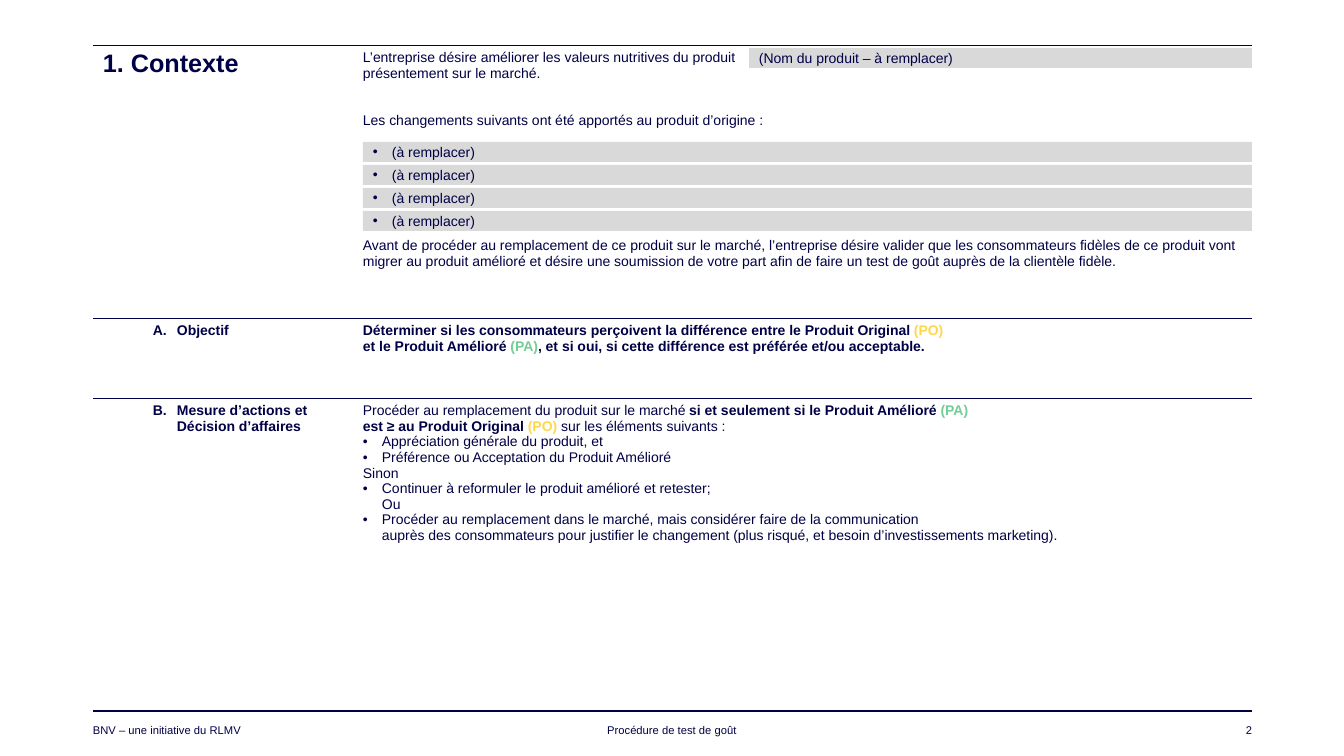
"""Builds the context slide of a taste-test procedure."""
from lxml import etree
from pptx import Presentation
from pptx.dml.color import RGBColor
from pptx.enum.shapes import MSO_CONNECTOR, MSO_SHAPE
from pptx.enum.text import MSO_ANCHOR, PP_ALIGN
from pptx.oxml import parse_xml
from pptx.oxml.ns import nsdecls, qn
from pptx.util import Emu, Pt

NAVY, YELLOW, GREEN, GREY = "000046", "FFD74B", "73CD96", "D9D9D9"
HANG = 19


def px(length):
    """Turn pixels into EMU."""
    return Emu(round(length * 914400 / 100.8))


def write(paragraph, text, size=10, bold=False, color=NAVY, align=PP_ALIGN.LEFT,
          before=0, left=0, hang=0, bullet=False):
    """Append text to a paragraph, with a line break at each newline."""
    paragraph.alignment = align
    paragraph.space_before = Pt(before)
    properties = paragraph._p.get_or_add_pPr()
    properties.set("marL", str(px(left)))
    properties.set("indent", str(-px(hang)))
    if bullet:
        etree.SubElement(properties, qn("a:buFont")).set("typeface", "Arial")
        etree.SubElement(properties, qn("a:buChar")).set("char", "•")
    for index, line in enumerate(text.split("\n")):
        if index:
            paragraph.add_line_break()
        if line:
            run = paragraph.add_run()
            run.text = line
            run.font.name = "Arial"
            run.font.size = Pt(size)
            run.font.bold = bold
            run.font.color.rgb = RGBColor.from_string(color)


deck = Presentation()
deck.slide_width, deck.slide_height = px(1344), px(756)
slide = deck.slides.add_slide(deck.slide_layouts[6])

footer_rule = slide.shapes.add_connector(
    MSO_CONNECTOR.STRAIGHT, px(93), px(711), px(1252), px(711))
footer_rule.line.color.rgb = RGBColor.from_string(NAVY)
footer_rule.line.width = Pt(0.75)
etree.SubElement(footer_rule._element.spPr, qn("a:effectLst"))

row_heights = [273, 80, 213]
sections = slide.shapes.add_table(
    3, 2, px(93), px(45), px(1159), px(sum(row_heights))).table
sections.first_row = sections.horz_banding = False
for column, width in zip(sections.columns, [260, 899]):
    column.width = px(width)
for row, height in zip(sections.rows, row_heights):
    row.height = px(height)

rule_fill = f'<a:solidFill><a:srgbClr val="{NAVY}"/></a:solidFill>'
for row in range(3):
    for column in range(2):
        cell = sections.cell(row, column)
        cell.fill.background()
        cell.margin_left = cell.margin_right = px(10)
        cell.margin_top = cell.margin_bottom = px(5)
        bottom_fill = rule_fill if row < 2 else "<a:noFill/>"
        for edge, fill in [("lnB", bottom_fill), ("lnT", rule_fill),
                           ("lnR", "<a:noFill/>"), ("lnL", "<a:noFill/>")]:
            cell._tc.get_or_add_tcPr().insert(0, parse_xml(
                f'<a:{edge} {nsdecls("a")} w="6350">{fill}</a:{edge}>'))

headings = [
    ("1. Contexte", dict(size=18)),
    ("A.\tObjectif", dict(left=74, hang=24)),
    ("B.\tMesure d’actions et\nDécision d’affaires", dict(left=74, hang=24)),
]
for row, (heading, layout) in enumerate(headings):
    write(sections.cell(row, 0).text_frame.paragraphs[0], heading, bold=True, **layout)

context = sections.cell(0, 1).text_frame
write(context.paragraphs[0],
      "L’entreprise désire améliorer les valeurs nutritives du produit\n"
      "présentement sur le marché.")
write(context.add_paragraph(),
      "Les changements suivants ont été apportés au produit d’origine :", before=22.3)
write(context.add_paragraph(),
      "Avant de procéder au remplacement de ce produit sur le marché, l’entreprise désire "
      "valider que les consommateurs fidèles de ce produit vont migrer au produit amélioré "
      "et désire une soumission de votre part afin de faire un test de goût auprès de la "
      "clientèle fidèle.", before=78.5)

objective = sections.cell(1, 1).text_frame.paragraphs[0]
for text, color in [
    ("Déterminer si les consommateurs perçoivent la différence entre le Produit Original ", NAVY),
    ("(PO)\n", YELLOW),
    ("et le Produit Amélioré ", NAVY),
    ("(PA)", GREEN),
    (", et si oui, si cette différence est préférée et/ou acceptable.", NAVY),
]:
    write(objective, text, bold=True, color=color)

actions = sections.cell(2, 1).text_frame
for text, bold, color in [
    ("Procéder au remplacement du produit sur le marché ", False, NAVY),
    ("si et seulement si le Produit Amélioré ", True, NAVY),
    ("(PA)\n", True, GREEN),
    ("est ≥ au Produit Original ", True, NAVY),
    ("(PO) ", True, YELLOW),
    ("sur les éléments suivants :", False, NAVY),
]:
    write(actions.paragraphs[0], text, bold=bold, color=color)

bulleted = dict(left=HANG, hang=HANG, bullet=True)
for text, layout in [
    ("Appréciation générale du produit, et", bulleted),
    ("Préférence ou Acceptation du Produit Amélioré", bulleted),
    ("Sinon", {}),
    ("Continuer à reformuler le produit amélioré et retester;\nOu", bulleted),
    ("Procéder au remplacement dans le marché, mais considérer faire de la communication\n"
     "auprès des consommateurs pour justifier le changement (plus risqué, et besoin "
     "d’investissements marketing).", bulleted),
]:
    write(actions.add_paragraph(), text, **layout)

for left, width, text, align in [
    (83, 304, "BNV – une initiative du RLMV", PP_ALIGN.LEFT),
    (445, 454, "Procédure de test de goût", PP_ALIGN.CENTER),
    (958, 304, "2", PP_ALIGN.RIGHT),
]:
    footer = slide.shapes.add_textbox(px(left), px(718), px(width), px(24)).text_frame
    footer.word_wrap = True
    write(footer.paragraphs[0], text, size=8, align=align)

fields = [(749, 48, "(Nom du produit – à remplacer)", {})]
fields += [(363, 142 + 23 * change, "(à remplacer)", bulleted) for change in range(4)]
for left, top, text, layout in fields:
    field = slide.shapes.add_shape(
        MSO_SHAPE.RECTANGLE, px(left), px(top), px(1252 - left), px(20))
    field.shadow.inherit = False
    field.fill.solid()
    field.fill.fore_color.rgb = RGBColor.from_string(GREY)
    field.line.fill.background()
    field.text_frame.word_wrap = True
    field.text_frame.vertical_anchor = MSO_ANCHOR.MIDDLE
    write(field.text_frame.paragraphs[0], text, **layout)

deck.save("out.pptx")
